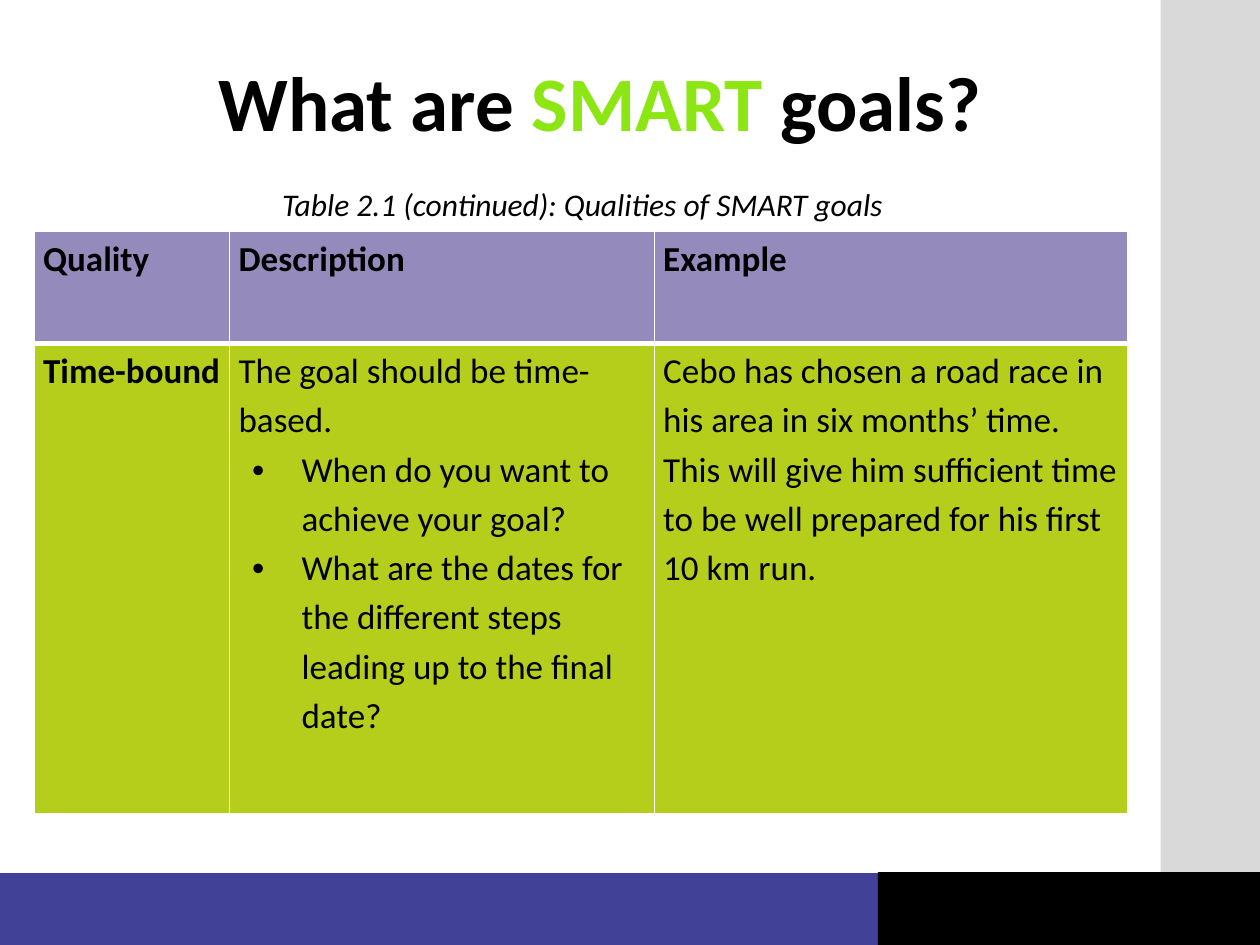
import pptx
import pptx.util
import pptx.dml.color
import pptx.enum.shapes
import pptx.enum.text
import pptx.oxml
import pptx.oxml.ns
from pptx.util import Cm, Pt

FONT = "Calibri"
BLACK, WHITE = "000000", "FFFFFF"

# left, top, width, height in cm, fill
BANDS = [
    (23.4, 0, 2, 19.02, "D9D9D9"),
    (0, 17.6, 25.4, 1.45, "414197"),
    (17.7, 17.58, 7.7, 1.47, BLACK),
]
HEADING = [("What are ", BLACK), ("SMART", "8CE614"), (" goals? ", BLACK)]
CAPTION = "Table 2.1 (continued): Qualities of SMART goals"

COLUMN_WIDTHS = [3.94, 8.56, 9.55]
BULLET = "• "
# height in cm, fill, bottom border in points, cells as lists of paragraphs
ROWS = [
    (2.26, "948ABC", 3, [["Quality"], ["Description"], ["Example"]]),
    (9.47, "B5CE1C", 1, [
        ["Time-bound"],
        ["The goal should be time-based.",
         BULLET + "When do you want to achieve your goal?",
         BULLET + "What are the dates for the different steps "
                  "leading up to the final date?"],
        ["Cebo has chosen a road race in his area in six months’ time. "
         "This will give him sufficient time to be well prepared for his "
         "first 10 km run."],
    ]),
]


def rgb(color):
    return pptx.dml.color.RGBColor.from_string(color)


def style(run, size, color=BLACK, bold=False, italic=False):
    font = run.font
    font.name, font.size = FONT, Pt(size)
    font.bold, font.italic = bold, italic
    font.color.rgb = rgb(color)


def add_xml(parent, xml):
    namespace = pptx.oxml.ns.nsdecls("a")
    parent.append(pptx.oxml.parse_xml(xml.replace("/>", f" {namespace}/>", 1)
                                      if xml.endswith("/>") else
                                      xml.replace(">", f" {namespace}>", 1)))


def centre(frame):
    """Wrap the frame and centre its single paragraph both ways."""
    frame.word_wrap = True
    frame.auto_size = pptx.enum.text.MSO_AUTO_SIZE.NONE
    frame.vertical_anchor = pptx.enum.text.MSO_ANCHOR.MIDDLE
    line = frame.paragraphs[0]
    line.alignment = pptx.enum.text.PP_ALIGN.CENTER
    line.line_spacing = 0.9
    return line


def set_borders(cell, bottom):
    for side, width in (("L", 1), ("R", 1), ("T", 1), ("B", bottom)):
        add_xml(cell._tc.get_or_add_tcPr(),
                f'<a:ln{side} w="{Pt(width)}"><a:solidFill>'
                f'<a:srgbClr val="{WHITE}"/></a:solidFill></a:ln{side}>')


def make_bullet(paragraph):
    properties = paragraph._p.get_or_add_pPr()
    properties.set("marL", str(Cm(1.27)))
    properties.set("indent", str(-Cm(1)))
    add_xml(properties, '<a:buFont typeface="Arial"/>')
    add_xml(properties, '<a:buChar char="•"/>')
    add_xml(properties, f'<a:tabLst><a:tab pos="{Cm(1.25)}" algn="l"/></a:tabLst>')


def fill_cell(cell, texts, fill, bottom, bold):
    cell.margin_left = cell.margin_right = Cm(0.18)
    cell.margin_top = cell.margin_bottom = 0
    set_borders(cell, bottom)
    cell.fill.solid()
    cell.fill.fore_color.rgb = rgb(fill)
    cell.text_frame.text = "\n".join(t.removeprefix(BULLET) for t in texts)
    for text, paragraph in zip(texts, cell.text_frame.paragraphs):
        if text.startswith(BULLET):
            make_bullet(paragraph)
        paragraph.line_spacing = 1.15
        style(paragraph.runs[0], 20, bold=bold)


def main():
    deck = pptx.Presentation()
    deck.slide_width, deck.slide_height = Cm(25.4), Cm(19.05)
    slide = deck.slides.add_slide(deck.slide_layouts[5])

    for *box, color in BANDS:
        band = slide.shapes.add_shape(pptx.enum.shapes.MSO_SHAPE.RECTANGLE,
                                      *map(Cm, box))
        band.shadow.inherit = False
        band.fill.solid()
        band.fill.fore_color.rgb = rgb(color)
        band.line.fill.background()

    caption = slide.shapes.title
    caption.left, caption.top = Cm(0.76), Cm(3.86)
    caption.width, caption.height = Cm(21.97), Cm(0.58)
    caption.text_frame.text = CAPTION
    style(centre(caption.text_frame).runs[0], 18, italic=True)

    heading = slide.shapes.add_textbox(Cm(1.32), Cm(1.02), Cm(21.9), Cm(2.24))
    heading_line = centre(heading.text_frame)
    for words, color in HEADING:
        run = heading_line.add_run()
        run.text = words
        style(run, 44, color, bold=True)

    qualities = slide.shapes.add_table(
        len(ROWS), len(COLUMN_WIDTHS), Cm(0.69), Cm(4.67),
        Cm(sum(COLUMN_WIDTHS)), Cm(sum(row[0] for row in ROWS))).table
    for column, width in zip(qualities.columns, COLUMN_WIDTHS):
        column.width = Cm(width)
    for r, (height, fill, bottom, cells) in enumerate(ROWS):
        qualities.rows[r].height = Cm(height)
        for c, texts in enumerate(cells):
            fill_cell(qualities.cell(r, c), texts, fill, bottom,
                      bold=r == 0 or c == 0)

    deck.save("out.pptx")


if __name__ == "__main__":
    main()
